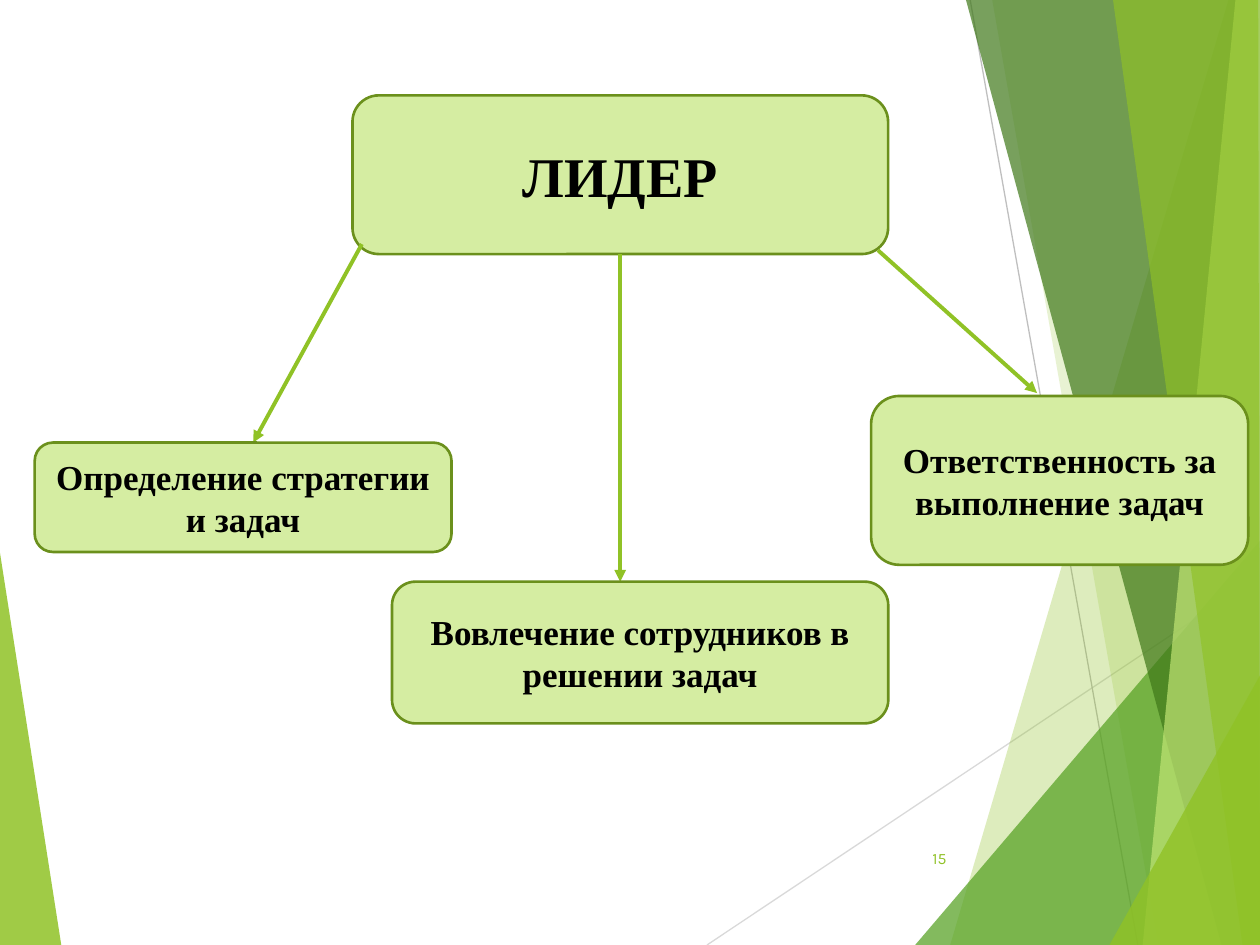
from lxml import etree
from pptx import Presentation
from pptx import util as u
from pptx.dml.color import RGBColor
from pptx.enum import shapes, text
from pptx.oxml import ns

COLOURS = {
    "lime": "90C226",
    "green": "54A021",
    "forest": "3F7819",
    "pale": "C0E474",
    "box": "D5EDA2",
    "edge": "6B901C",
    "ink": "000000",
    "thin": "D9D9D9",
    "grey": "BFBFBF",
}
WIDTH, HEIGHT = 720, 540

FACETS_BEHIND = [
    ("lime", 85, [(0, 316), (35.3, 540), (0, 540)]),
]
RULES = [
    ("thin", (404, 540), (720, 329)),
    ("grey", (554.4, 0), (650.2, 540)),
]
FACETS = [
    ("lime", 30, [(702, 0), (543, 540), (720, 540), (720, 0)]),
    ("lime", 20, [(567.4, 0), (661.7, 540), (720, 540), (720, 0)]),
    ("green", 72, [(522.7, 540), (720, 309), (720, 540)]),
    ("forest", 70, [(552.2, 0), (698.4, 540), (720, 540), (720, 0)]),
    ("pale", 70, [(706.3, 0), (653, 540), (720, 540), (720, 0)]),
    ("lime", 65, [(636, 0), (710, 540), (720, 540), (718.6, 0)]),
    ("lime", 80, [(634.5, 540), (720, 385.5), (720, 540)]),
]
LEADER = ("ЛИДЕР", (201.4, 54.5, 306.1, 90.7), 32)
ARROWS = [
    ((206.8, 139.5), (144.7, 252.9)),
    ((354.4, 145.2), (354.4, 332.4)),
    ((501.7, 143), (592.6, 224.6)),
]
DUTIES = [
    ("Определение стратегии\nи задач", (19.8, 252.9, 238.2, 62.5), 20),
    ("Вовлечение сотрудников в решении задач", (224, 332.4, 283.6, 81), 20),
    ("Ответственность за выполнение задач", (497.8, 226.3, 215.5, 96.5), 20),
]


class Sketch:
    """Draws facets, lines, boxes and labels on one page in a shared style."""

    def __init__(self, page, colours, font):
        self.page = page
        self.colours = colours
        self.font = font

    def colour(self, name):
        return RGBColor.from_string(self.colours[name])

    def facet(self, fill, opacity, points):
        builder = self.page.shapes.build_freeform(*points[0], scale=u.Pt(1))
        builder.add_line_segments(points[1:], close=True)
        shape = builder.convert_to_shape()
        shape.shadow.inherit = False
        shape.fill.solid()
        shape.fill.fore_color.rgb = self.colour(fill)
        shape.line.fill.background()
        tint = shape._element.spPr.find(ns.qn("a:solidFill"))[0]
        etree.SubElement(tint, ns.qn("a:alpha"), val=str(opacity * 1000))

    def line(self, colour, start, end, width=0.75, arrow=False):
        ends = [u.Pt(value) for value in (*start, *end)]
        line = self.page.shapes.add_connector(shapes.MSO_CONNECTOR.STRAIGHT, *ends)
        line.line.color.rgb = self.colour(colour)
        line.line.width = u.Pt(width)
        if arrow:
            stroke = line._element.spPr.find(ns.qn("a:ln"))
            etree.SubElement(stroke, ns.qn("a:tailEnd"), type="triangle")
        etree.SubElement(line._element.spPr, ns.qn("a:effectLst"))

    def set_words(self, shape, words, size, font, colour, align, bold=False):
        frame = shape.text_frame
        frame.word_wrap = True
        frame.vertical_anchor = text.MSO_ANCHOR.MIDDLE
        frame.text = words
        for para in frame.paragraphs:
            para.alignment = align
            for span in para.runs:
                span.font.name = font
                span.font.size = u.Pt(size)
                span.font.bold = bold
                span.font.color.rgb = self.colour(colour)

    def box(self, words, place, size):
        box = self.page.shapes.add_shape(
            shapes.MSO_SHAPE.ROUNDED_RECTANGLE, *map(u.Pt, place))
        box.shadow.inherit = False
        box.fill.solid()
        box.fill.fore_color.rgb = self.colour("box")
        box.line.color.rgb = self.colour("edge")
        box.line.width = u.Pt(1.5)
        self.set_words(box, words, size, self.font, "ink", text.PP_ALIGN.CENTER, True)

    def label(self, words, place, size, font):
        label = self.page.shapes.add_textbox(*map(u.Pt, place))
        self.set_words(label, words, size, font, "lime", text.PP_ALIGN.RIGHT)


def main():
    deck = Presentation()
    deck.slide_width, deck.slide_height = u.Pt(WIDTH), u.Pt(HEIGHT)
    page = deck.slides.add_slide(deck.slide_layouts[6])
    sketch = Sketch(page, COLOURS, "Times New Roman")

    for facet in FACETS_BEHIND:
        sketch.facet(*facet)
    for rule in RULES:
        sketch.line(*rule)
    for facet in FACETS:
        sketch.facet(*facet)
    sketch.label("15", (507.6, 475.9, 40.3, 28.8), 9, "Karla")
    sketch.box(*LEADER)
    for start, end in ARROWS:
        sketch.line("lime", start, end, width=2.25, arrow=True)
    for duty in DUTIES:
        sketch.box(*duty)

    deck.save("out.pptx")


if __name__ == "__main__":
    main()
